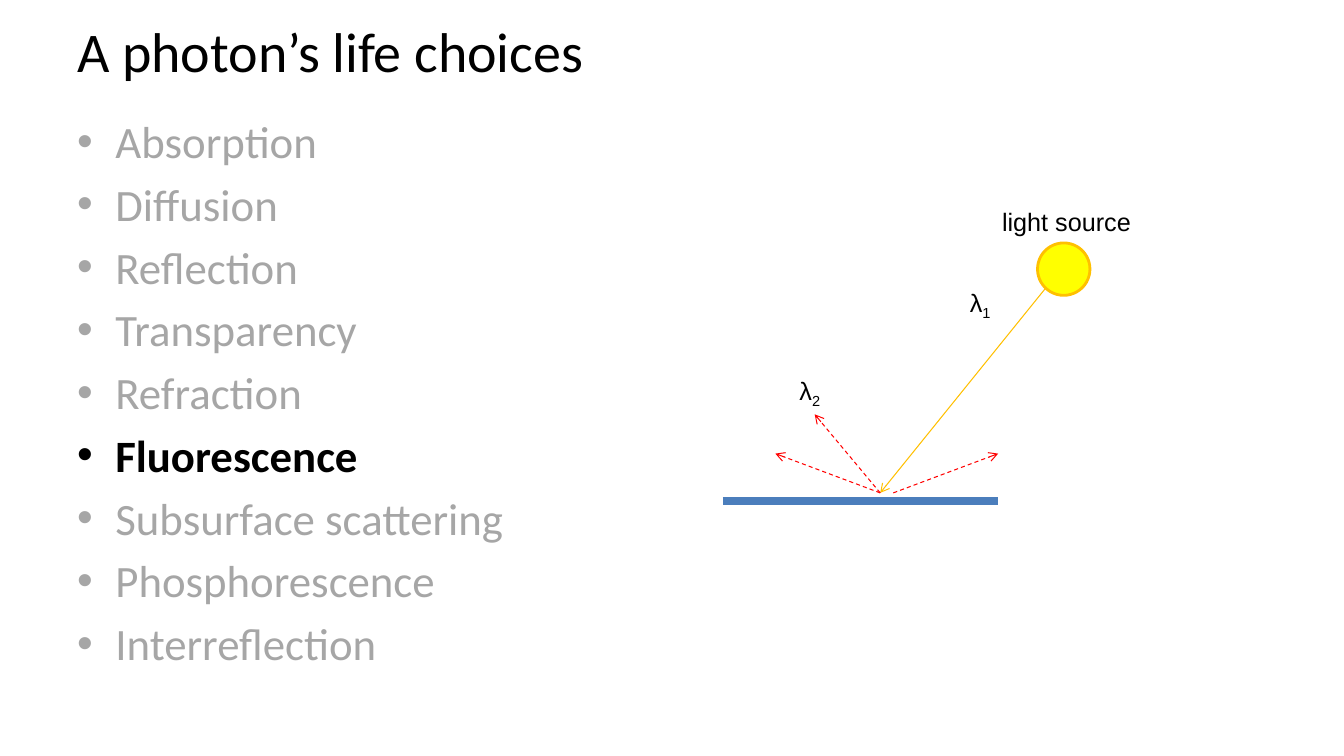
import pptx
import pptx.util
import pptx.dml.color
import pptx.enum.dml
import pptx.enum.shapes
import pptx.enum.text
import pptx.oxml.ns
from lxml import etree

Inches, Pt = pptx.util.Inches, pptx.util.Pt
ANCHOR = pptx.enum.text.MSO_ANCHOR

# Content
TITLE = "A photon’s life choices"
CHOICES = ["Absorption", "Diffusion", "Reflection", "Transparency", "Refraction",
           "Fluorescence", "Subsurface scattering", "Phosphorescence", "Interreflection"]
CURRENT = "Fluorescence"
COLORS = {"text": "000000", "muted": "A6A6A6", "surface": "4B7EBC",
          "sun": "FFFF00", "light": "FFC000", "emitted": "FF0000"}

# Geometry in inches
WIDTH, HEIGHT = 13.33, 7.5
MARGIN = WIDTH / 20
COLUMN = WIDTH - 2 * MARGIN
SURFACE = ((7.17, 4.97), (9.9, 4.97))
SUN = (10.29, 2.41, 0.52, 0.52)
HIT = (8.73, 4.89)
EXIT = (8.86, 4.89)
# start, end, colour, width in points, dashed, arrow
RAYS = [
    (*SURFACE, "surface", 6, False, False),
    ((10.37, 2.86), HIT, "light", 0.75, False, True),
    (HIT, (8.08, 4.11), "emitted", 0.75, True, True),
    (HIT, (7.69, 4.5), "emitted", 0.75, True, True),
    (EXIT, (9.9, 4.5), "emitted", 0.75, True, True),
]
# text, subscript, box, wrap
LABELS = [
    ("λ", "1", (9.52, 2.8, 0.42, 0.4), False),
    ("light source", "", (9.84, 2, 1.5, 0.42), True),
    ("λ", "2", (7.83, 3.67, 0.42, 0.4), False),
]


def rgb(name):
    return pptx.dml.color.RGBColor.from_string(COLORS[name])


def add_xml(parent, tag, **attrs):
    return etree.SubElement(parent, pptx.oxml.ns.qn(tag), attrs)


def add_box(slide, box, wrap=True, anchor=ANCHOR.TOP):
    tf = slide.shapes.add_textbox(*map(Inches, box)).text_frame
    tf.word_wrap = wrap
    tf.vertical_anchor = anchor
    return tf


def style_run(r, size, font, color="text", bold=False):
    r.font.size = Pt(size)
    r.font.name = font
    r.font.bold = bold
    r.font.color.rgb = rgb(color)


def add_bullet(p):
    pPr = p._p.get_or_add_pPr()
    pPr.set("marL", str(Inches(0.38)))
    pPr.set("indent", str(-Inches(0.38)))
    add_xml(add_xml(pPr, "a:spcBef"), "a:spcPct", val="20000")
    add_xml(pPr, "a:buFont", typeface="Arial")
    add_xml(pPr, "a:buChar", char="•")


def add_ray(slide, start, end, color, width, dashed, arrow):
    ray = slide.shapes.add_connector(pptx.enum.shapes.MSO_CONNECTOR.STRAIGHT,
                                     *map(Inches, start + end))
    ray.line.color.rgb = rgb(color)
    ray.line.width = Pt(width)
    if dashed:
        ray.line.dash_style = pptx.enum.dml.MSO_LINE.DASH
    if arrow:
        add_xml(ray.line._get_or_add_ln(), "a:tailEnd", type="arrow")
    add_xml(ray._element.spPr, "a:effectLst")


prs = pptx.Presentation()
prs.slide_width, prs.slide_height = Inches(WIDTH), Inches(HEIGHT)
slide = prs.slides.add_slide(prs.slide_layouts[6])

# Title
tf = add_box(slide, (MARGIN, 0, COLUMN, 1), anchor=ANCHOR.MIDDLE)
tf.text = TITLE
style_run(tf.paragraphs[0].runs[0], 40, "Calibri")

# List with the current choice highlighted
tf = add_box(slide, (MARGIN, 1.08, COLUMN, HEIGHT * 0.75))
tf.text = "\n".join(CHOICES)
for p in tf.paragraphs:
    add_bullet(p)
    current = p.text == CURRENT
    style_run(p.runs[0], 32, "Calibri", "text" if current else "muted", current)

# Light source
sun = slide.shapes.add_shape(pptx.enum.shapes.MSO_SHAPE.OVAL, *map(Inches, SUN))
sun.shadow.inherit = False
sun.fill.solid()
sun.fill.fore_color.rgb = rgb("sun")
sun.line.color.rgb = rgb("light")
sun.line.width = Pt(2)

# Surface and rays
for ray in RAYS:
    add_ray(slide, *ray)

# Labels
for text, subscript, box, wrap in LABELS:
    tf = add_box(slide, box, wrap)
    tf.text = text
    p = tf.paragraphs[0]
    if subscript:
        r = p.add_run()
        r.text = subscript
        r.font._element.set("baseline", "-25000")
    for r in p.runs:
        style_run(r, 18, "Arial")

prs.save("out.pptx")
